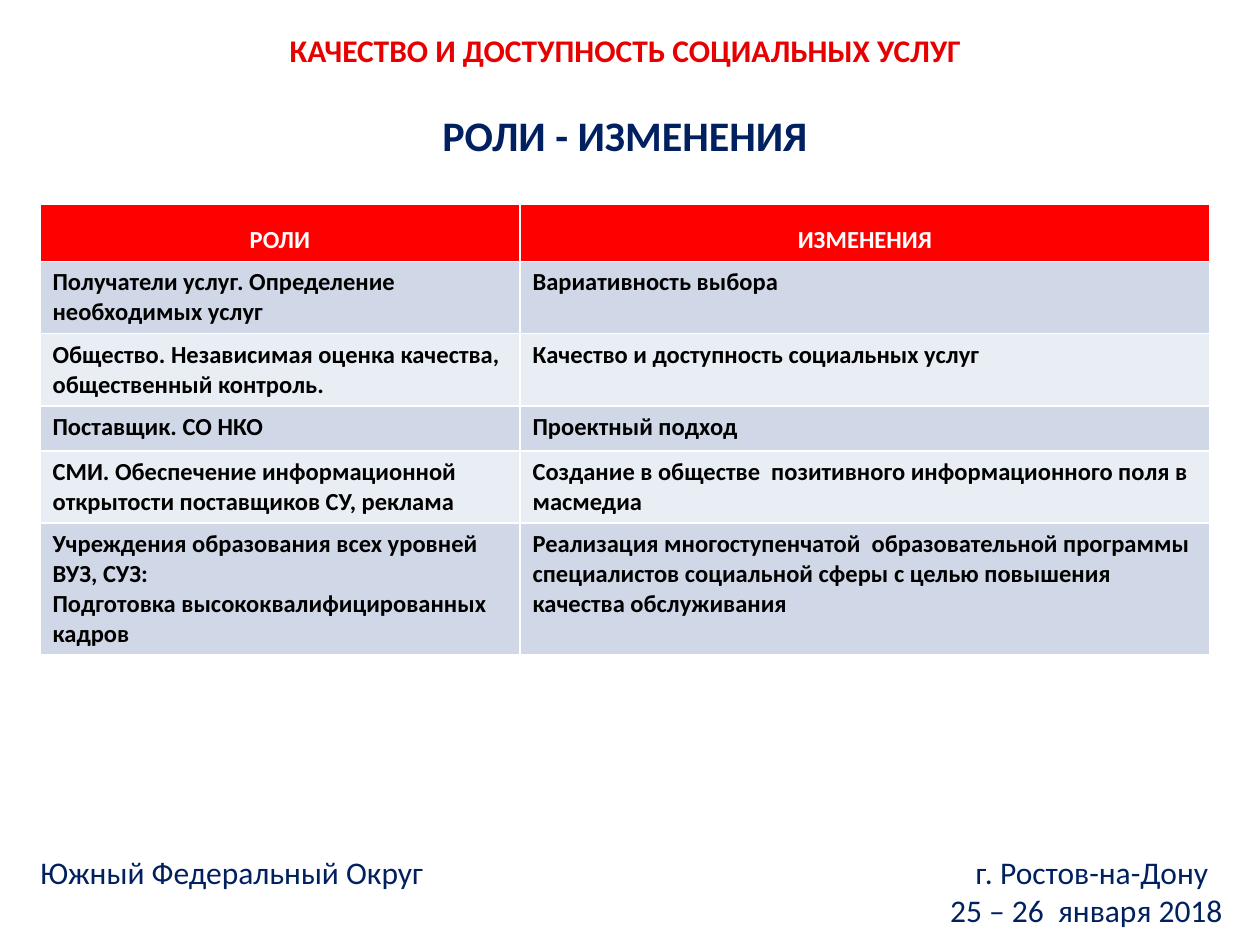
from pptx import Presentation, util as u
from pptx.dml.color import RGBColor
from pptx.enum import text
from pptx.oxml import parse_xml
from pptx.oxml.ns import nsdecls

PX = 914400 // 126
LEFT, CENTER, RIGHT = text.PP_ALIGN.LEFT, text.PP_ALIGN.CENTER, text.PP_ALIGN.RIGHT
TOP, MIDDLE = text.MSO_ANCHOR.TOP, text.MSO_ANCHOR.MIDDLE

NAVY, RED = "002060", "E60000"
FOOTER_TAB = 1168
TEXTS = [
    {"box": (428, 103, 394, 63), "lines": [("РОЛИ - ИЗМЕНЕНИЯ", CENTER)],
     "size": 24, "bold": True, "color": NAVY, "anchor": TOP, "wrap": False},
    {"box": (28, 854, 1207, 74),
     "lines": [("Южный Федеральный Округ\tг. Ростов-на-Дону", LEFT),
               ("25 – 26  января 2018", RIGHT)],
     "size": 18, "bold": False, "color": NAVY, "anchor": MIDDLE, "wrap": True},
    {"box": (175, 25, 901, 49),
     "lines": [("КАЧЕСТВО И ДОСТУПНОСТЬ СОЦИАЛЬНЫХ УСЛУГ", CENTER)],
     "size": 18, "bold": True, "color": RED, "anchor": MIDDLE, "wrap": True},
]

TABLE_AT = (40, 204)
COLS = [480, 690]
ROWS = [
    (57, "РОЛИ", "ИЗМЕНЕНИЯ"),
    (72, "Получатели услуг. Определение необходимых услуг", "Вариативность выбора"),
    (71, "Общество. Независимая оценка качества, общественный контроль.",
     "Качество и доступность социальных услуг"),
    (45, "Поставщик. СО НКО", "Проектный подход"),
    (71, "СМИ. Обеспечение информационной открытости поставщиков СУ, реклама",
     "Создание в обществе  позитивного информационного поля в масмедиа"),
    (130, "Учреждения образования всех уровней ВУЗ, СУЗ:\n"
          "Подготовка высококвалифицированных кадров",
     "Реализация многоступенчатой  образовательной программы специалистов "
     "социальной сферы с целью повышения качества обслуживания"),
]
HEADER_FILL, BANDS = "FF0000", ("E9EDF4", "D0D8E8")


def px(n):
    return u.Emu(n * PX)


def rgb(value):
    return RGBColor.from_string(value)


def style(p, size, bold, color, **layout):
    for name, value in layout.items():
        setattr(p, name, value)
    for name, value in {"name": "Calibri", "size": u.Pt(size), "bold": bold}.items():
        for r in p.runs:
            setattr(r.font, name, value)
    for r in p.runs:
        r.font.color.rgb = rgb(color)


def add_text(s, item):
    tf = s.shapes.add_textbox(*map(px, item["box"])).text_frame
    tf.word_wrap = item["wrap"]
    tf.vertical_anchor = item["anchor"]
    for i, (line, align) in enumerate(item["lines"]):
        p = tf.add_paragraph() if i else tf.paragraphs[0]
        if "\t" in line:
            p._p.get_or_add_pPr().append(parse_xml(
                f'<a:tabLst {nsdecls("a")}><a:tab pos="{px(FOOTER_TAB)}" algn="r"/></a:tabLst>'))
        p.add_run().text = line
        style(p, item["size"], item["bold"], item["color"], alignment=align)


def add_roles_table(s):
    size = sum(COLS), sum(row[0] for row in ROWS)
    table = s.shapes.add_table(len(ROWS), len(COLS), *map(px, TABLE_AT + size)).table
    for col, width in zip(table.columns, COLS):
        col.width = px(width)
    for i, (height, *labels) in enumerate(ROWS):
        table.rows[i].height = px(height)
        for j, label in enumerate(labels):
            cell = table.cell(i, j)
            cell.text = label
            cell.fill.solid()
            cell.fill.fore_color.rgb = rgb(BANDS[i % 2] if i else HEADER_FILL)
            layout = {} if i else {"alignment": CENTER, "line_spacing": 1.5}
            for p in cell.text_frame.paragraphs:
                style(p, 14, True, "000000" if i else "FFFFFF", **layout)


def main():
    prs = Presentation()
    prs.slide_width, prs.slide_height = px(1260), px(945)
    s = prs.slides.add_slide(prs.slide_layouts[6])
    add_roles_table(s)
    for item in TEXTS:
        add_text(s, item)
    prs.save("out.pptx")


if __name__ == "__main__":
    main()
